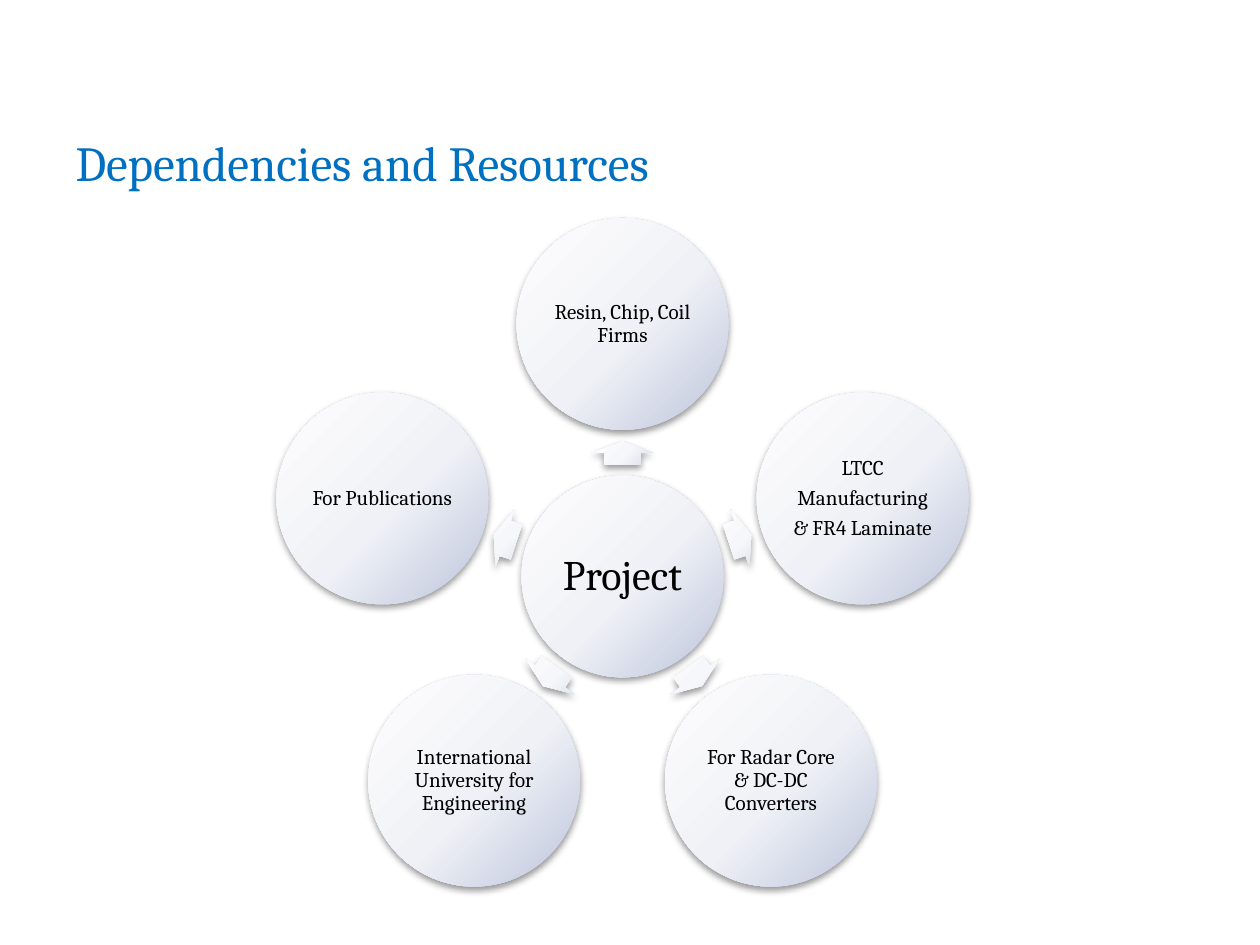
"""Build a radial diagram of a project's dependencies and resources."""
from math import cos, radians, sin

from pptx import Presentation
from pptx.dml.color import RGBColor
from pptx.enum.shapes import MSO_SHAPE
from pptx.enum.text import MSO_ANCHOR, PP_ALIGN
from pptx.oxml import parse_xml
from pptx.oxml.ns import nsdecls
from pptx.util import Cm, Pt

CIRCLE_STOPS = [(0, "FEFEFE"), (55, "EFF1F6"), (100, "BCC4DB")]
ARROW_STOPS = [(0, "FEFEFF"), (55, "F6F7FA"), (100, "DADEEA")]
CENTER_X, CENTER_Y = 12.55, 11.62
RESOURCE_ORBIT, ARROW_ORBIT = 5.09, 2.49
HUB_SIZE, RESOURCE_SIZE = 4.07, 4.27
ARROW_WIDTH, ARROW_HEIGHT = 0.48, 1.24


def add_shaded_shape(kind, x, y, width, height, stops):
    shape = slide.shapes.add_shape(
        kind, Cm(x - width / 2), Cm(y - height / 2), Cm(width), Cm(height))
    shape.line.fill.background()
    outline = shape.line._get_or_add_ln()
    stop_xml = "".join(
        f'<a:gs pos="{position * 1000}"><a:srgbClr val="{color}"/></a:gs>'
        for position, color in stops)
    outline.addprevious(parse_xml(
        f'<a:gradFill {nsdecls("a")} rotWithShape="1"><a:gsLst>{stop_xml}</a:gsLst>'
        '<a:path path="circle"><a:fillToRect l="-40000" t="-90000" r="140000" b="190000"/>'
        '</a:path></a:gradFill>'))
    outline.addnext(parse_xml(
        f'<a:effectLst {nsdecls("a")}><a:outerShdw blurRad="52000" dist="25400" '
        'dir="5400000" rotWithShape="0"><a:srgbClr val="000000"><a:alpha val="40000"/>'
        '</a:srgbClr></a:outerShdw></a:effectLst>'))
    return shape


def write_text(frame, text, size, color, align, anchor):
    frame.text = text
    frame.word_wrap = True
    frame.vertical_anchor = anchor
    for paragraph in frame.paragraphs:
        paragraph.alignment = align
        for run in paragraph.runs:
            run.font.name = "Cambria"
            run.font.size = Pt(size)
            run.font.color.rgb = RGBColor.from_string(color)


presentation = Presentation()
presentation.slide_width, presentation.slide_height = Cm(25.4), Cm(19.05)
slide = presentation.slides.add_slide(presentation.slide_layouts[5])

heading = slide.shapes.title
heading.left, heading.top, heading.width, heading.height = Cm(1.27), Cm(2.54), Cm(22.86), Cm(2.54)
write_text(heading.text_frame, "Dependencies and Resources", 28, "0070C0",
           PP_ALIGN.LEFT, MSO_ANCHOR.TOP)

circles = [(CENTER_X, CENTER_Y, HUB_SIZE, "Project", 24)]
resources = [
    "Resin, Chip, Coil Firms",
    "LTCC\nManufacturing\n& FR4 Laminate",
    "For Radar Core & DC-DC Converters",
    "International University for Engineering",
    "For Publications",
]
for index, resource in enumerate(resources):
    angle = index * 360 / len(resources) - 90
    across, down = cos(radians(angle)), sin(radians(angle))
    arrow = add_shaded_shape(
        MSO_SHAPE.RIGHT_ARROW, CENTER_X + ARROW_ORBIT * across, CENTER_Y + ARROW_ORBIT * down,
        ARROW_WIDTH, ARROW_HEIGHT, ARROW_STOPS)
    arrow.adjustments[0], arrow.adjustments[1] = 0.6, 0.5
    arrow.rotation = angle % 360
    circles.append((CENTER_X + RESOURCE_ORBIT * across, CENTER_Y + RESOURCE_ORBIT * down,
                    RESOURCE_SIZE, resource, 12))

for x, y, diameter, label, size in circles:
    circle = add_shaded_shape(MSO_SHAPE.OVAL, x, y, diameter, diameter, CIRCLE_STOPS)
    frame = circle.text_frame
    frame.margin_left = frame.margin_right = frame.margin_top = frame.margin_bottom = Cm(0.05)
    write_text(frame, label, size, "000000", PP_ALIGN.CENTER, MSO_ANCHOR.MIDDLE)
    for paragraph in frame.paragraphs:
        paragraph.line_spacing = 0.9
        paragraph.space_after = Pt(size * 0.35)

presentation.save("out.pptx")
